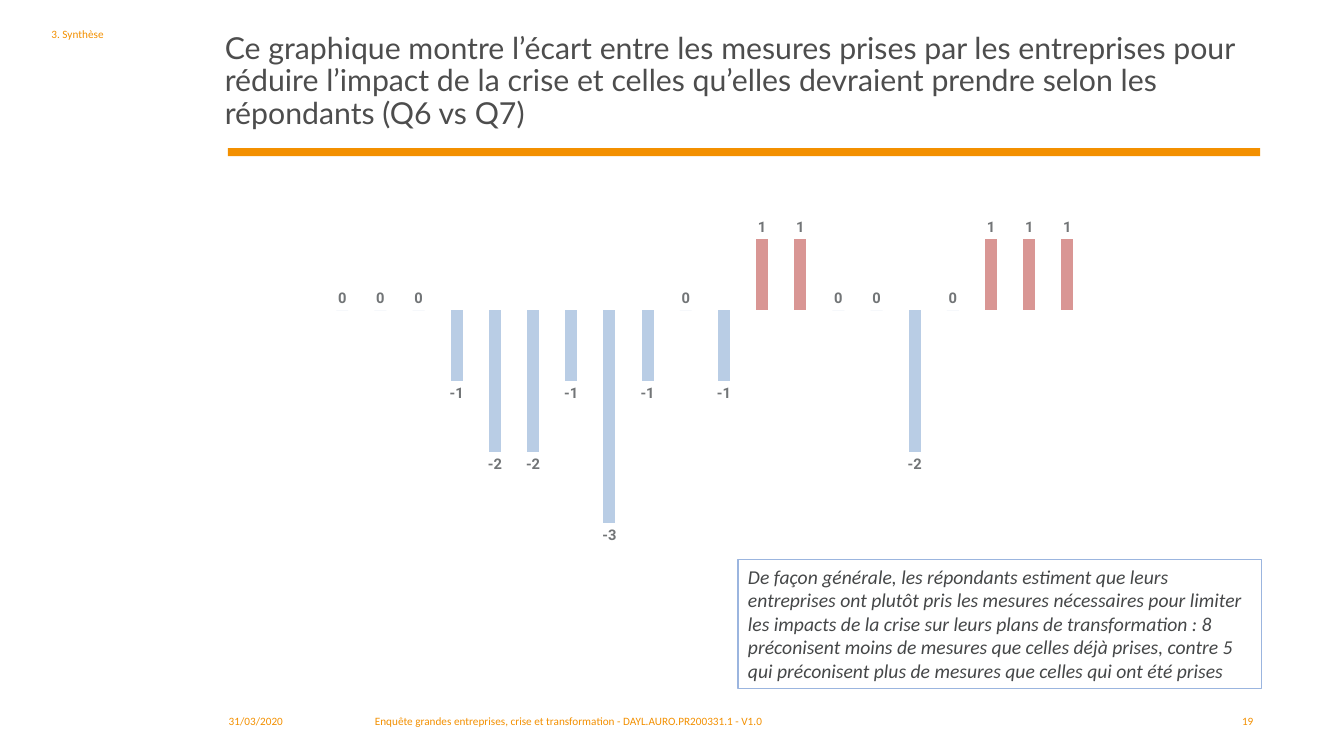
from dataclasses import dataclass

from pptx import Presentation
from pptx.chart.data import CategoryChartData
from pptx.dml.color import RGBColor
from pptx.enum import chart as charts, shapes, text
from pptx.util import Inches, Pt


@dataclass(frozen=True)
class Theme:
    orange: str = "F39000"
    title_grey: str = "4D4D4D"
    text_grey: str = "454748"
    label_grey: str = "727577"
    white: str = "FFFFFF"
    frame_blue: str = "9BB5DF"
    fewer_blue: str = "B9CDE5"
    more_red: str = "D99694"
    title_font: str = "Lato"
    text_font: str = "Calibri"
    chart_font: str = "Roboto"
    title_size: float = 21.6
    comment_size: float = 14
    label_size: float = 10.5
    chart_size: float = 10
    small_size: float = 8


def rgb(code):
    return RGBColor.from_string(code)


def style_font(font, name, size, color, bold=False, italic=False):
    font.name, font.size = name, Pt(size)
    font.bold, font.italic = bold, italic
    font.color.rgb = rgb(color)


class SlideBuilder:
    def __init__(self, slide, theme):
        self.slide, self.theme = slide, theme

    def set_words(self, shape, words, font, size, color, align=text.PP_ALIGN.LEFT, italic=False):
        """Fill a shape with one formatted paragraph."""
        frame = shape.text_frame
        frame.word_wrap = True
        frame.text = words
        paragraph = frame.paragraphs[0]
        paragraph.alignment = align
        paragraph.space_before = Pt(0)
        style_font(paragraph.runs[0].font, font, size, color, italic=italic)
        return paragraph

    def place(self, shape, box):
        shape.left, shape.top, shape.width, shape.height = map(Inches, box)

    def title(self, words, box):
        title = self.slide.shapes.title
        self.place(title, box)
        paragraph = self.set_words(title, words, self.theme.title_font,
                                   self.theme.title_size, self.theme.title_grey)
        paragraph.line_spacing = 0.9
        title.text_frame.vertical_anchor = text.MSO_ANCHOR.BOTTOM
        title.text_frame.auto_size = text.MSO_AUTO_SIZE.NONE

    def section(self, words, box):
        """Put the section name in the body placeholder and drop the unused one."""
        for holder in list(self.slide.placeholders):
            kind = holder.placeholder_format.type
            if kind == shapes.PP_PLACEHOLDER.BODY:
                self.place(holder, box)
                self.small(holder, words)
            elif kind != shapes.PP_PLACEHOLDER.TITLE:
                holder.element.getparent().remove(holder.element)

    def small(self, shape, words, align=text.PP_ALIGN.LEFT):
        self.set_words(shape, words, self.theme.text_font, self.theme.small_size,
                       self.theme.orange, align)

    def footer(self, words, box, align=text.PP_ALIGN.LEFT):
        self.small(self.slide.shapes.add_textbox(*map(Inches, box)), words, align)

    def rectangle(self, box, fill, line=None):
        rectangle = self.slide.shapes.add_shape(
            shapes.MSO_SHAPE.RECTANGLE, *map(Inches, box))
        rectangle.shadow.inherit = False
        rectangle.fill.solid()
        rectangle.fill.fore_color.rgb = rgb(fill)
        if line:
            rectangle.line.color.rgb = rgb(line)
            rectangle.line.width = Pt(1)
        else:
            rectangle.line.fill.background()
        return rectangle

    def comment(self, words, box):
        comment = self.rectangle(box, self.theme.white, self.theme.frame_blue)
        self.set_words(comment, words, self.theme.text_font, self.theme.comment_size,
                       self.theme.text_grey, italic=True)
        comment.text_frame.vertical_anchor = text.MSO_ANCHOR.TOP
        comment.text_frame.auto_size = text.MSO_AUTO_SIZE.SHAPE_TO_FIT_TEXT

    def gap_chart(self, gaps, box):
        """Draw columns, red where more measures are wanted and blue elsewhere."""
        theme = self.theme
        data = CategoryChartData()
        data.categories = [str(n) for n in range(1, len(gaps) + 1)]
        data.add_series("Series 1", gaps)
        chart = self.slide.shapes.add_chart(
            charts.XL_CHART_TYPE.COLUMN_CLUSTERED, *map(Inches, box), data).chart
        chart.has_title = chart.has_legend = False
        style_font(chart.font, theme.chart_font, theme.chart_size, theme.text_grey)
        chart.category_axis.visible = False
        scale = chart.value_axis
        scale.visible = scale.has_major_gridlines = False
        scale.minimum_scale, scale.maximum_scale = -3.5, 1.5

        plot = chart.plots[0]
        plot.vary_by_categories = False
        plot.gap_width, plot.overlap = 219, -27
        columns = plot.series[0]
        columns.invert_if_negative = False
        columns.format.fill.solid()
        columns.format.fill.fore_color.rgb = rgb(theme.fewer_blue)
        for index, gap in enumerate(gaps):
            if gap is not None and gap > 0:
                fill = columns.points[index].format.fill
                fill.solid()
                fill.fore_color.rgb = rgb(theme.more_red)

        labels = columns.data_labels
        labels.show_value = True
        labels.position = charts.XL_LABEL_POSITION.OUTSIDE_END
        style_font(labels.font, theme.chart_font, theme.label_size,
                   theme.label_grey, bold=True)


def main():
    deck = Presentation()
    deck.slide_width, deck.slide_height = Inches(13.33), Inches(7.5)
    caption_layout = deck.slide_layouts.get_by_name("Content with Caption")
    theme = Theme()
    page = SlideBuilder(deck.slides.add_slide(caption_layout), theme)

    page.rectangle((2.26, 1.47, 10.24, 0.08), theme.orange)
    page.title("Ce graphique montre l’écart entre les mesures prises par les entreprises "
               "pour réduire l’impact de la crise et celles qu’elles devraient prendre "
               "selon les répondants (Q6 vs Q7)", (2.13, 0.22, 10.37, 1.13))
    page.section("3. Synthèse", (0.41, 0.22, 1.69, 1.37))

    page.gap_chart([0, 0, 0, -1, -2, -2, -1, -3, -1, 0, -1, 1, 1, 0, 0, -2, 0, 1, 1, 1, None],
                   (3.04, 1.95, 8.28, 3.66))
    page.comment("De façon générale, les répondants estiment que leurs entreprises ont "
                 "plutôt pris les mesures nécessaires pour limiter les impacts de la crise "
                 "sur leurs plans de transformation : 8 préconisent moins de mesures que "
                 "celles déjà prises, contre 5 qui préconisent plus de mesures que celles "
                 "qui ont été prises", (7.32, 5.55, 5.19, 1.28))

    page.footer("31/03/2020", (2.17, 7.04, 1.42, 0.36))
    page.footer("Enquête grandes entreprises, crise et transformation - "
                "DAYL.AURO.PR200331.1 - V1.0", (3.62, 7.04, 5.47, 0.36))
    page.footer("19", (11.31, 7.04, 1.22, 0.36), text.PP_ALIGN.RIGHT)
    deck.save("out.pptx")


if __name__ == "__main__":
    main()
